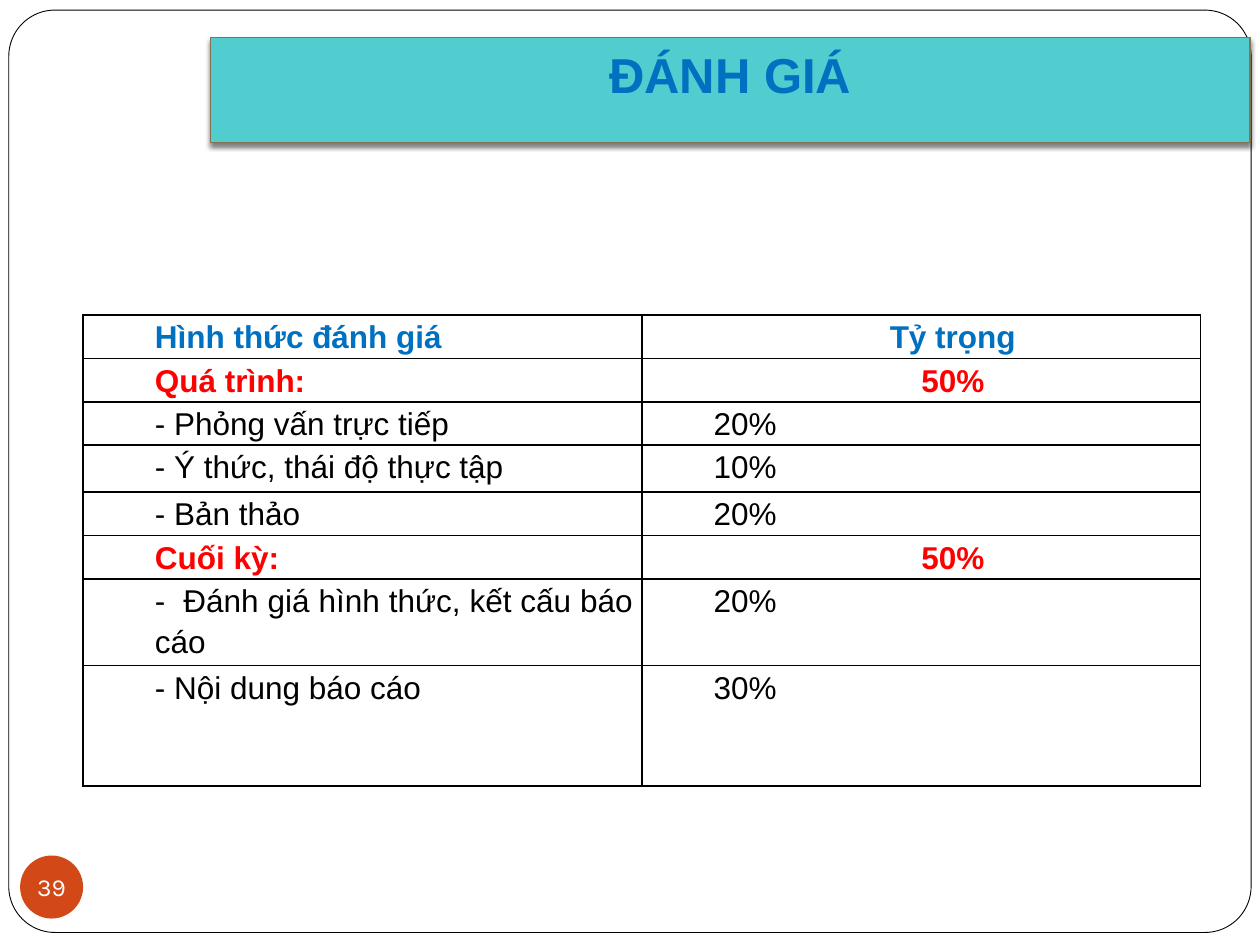
from collections import namedtuple

from lxml import etree
from pptx import Presentation
from pptx.dml.color import RGBColor
from pptx.enum.shapes import MSO_SHAPE as Shape
from pptx.enum.text import MSO_ANCHOR as Anchor, MSO_AUTO_SIZE as AutoSize, PP_ALIGN as Align
from pptx.oxml.ns import qn
from pptx.util import Inches, Pt

BLACK = RGBColor(0x00, 0x00, 0x00)
WHITE = RGBColor(0xFF, 0xFF, 0xFF)
BLUE = RGBColor(0x00, 0x70, 0xC0)
RED = RGBColor(0xFF, 0x00, 0x00)
TURQUOISE = RGBColor(0x51, 0xCC, 0xCF)
BROWN = RGBColor(0x84, 0x72, 0x53)
ORANGE = RGBColor(0xD3, 0x48, 0x17)

SLIDE_WIDTH, SLIDE_HEIGHT = Inches(10), Inches(7.5)
Box = namedtuple("Box", "left top width height")

HEADING, GROUP, ITEM = "heading", "group", "item"
ROW_COLORS = {HEADING: BLUE, GROUP: RED, ITEM: BLACK}
CRITERIA = [
    (HEADING, 1, "Hình thức đánh giá", "Tỷ trọng"),
    (GROUP, 1, "Quá trình:", "50%"),
    (ITEM, 1, "- Phỏng vấn trực tiếp", "20%"),
    (ITEM, 1.08, "- Ý thức, thái độ thực tập", "10%"),
    (ITEM, 1, "- Bản thảo", "20%"),
    (GROUP, 1, "Cuối kỳ:", "50%"),
    (ITEM, 2, "-  Đánh giá hình thức, kết cấu báo cáo", "20%"),
    (ITEM, 2.77, "- Nội dung báo cáo", "30%"),
]


def percent_box(left, top, width, height):
    return Box(int(SLIDE_WIDTH * left / 100), int(SLIDE_HEIGHT * top / 100),
               int(SLIDE_WIDTH * width / 100), int(SLIDE_HEIGHT * height / 100))


def style_text(paragraph, name, size, color, bold=False, align=Align.CENTER):
    paragraph.alignment = align
    for run in paragraph.runs:
        run.font.name, run.font.size, run.font.bold = name, Pt(size), bold
        run.font.color.rgb = color


def paint(shape, fill, line=None, width=0):
    shape.fill.solid()
    shape.fill.fore_color.rgb = fill
    if line is None:
        shape.line.fill.background()
    else:
        shape.line.color.rgb = line
        shape.line.width = Pt(width)


def add_color(parent, color):
    return etree.SubElement(parent, qn("a:srgbClr"), val=str(color))


def add_shadow(shape):
    effects = etree.SubElement(shape.element.spPr, qn("a:effectLst"))
    shadow = etree.SubElement(effects, qn("a:outerShdw"), blurRad=str(Pt(3)),
                              dist=str(Pt(2)), dir="5400000", rotWithShape="0")
    etree.SubElement(add_color(shadow, BLACK), qn("a:alpha"), val="50000")


def add_frame(slide, box):
    frame = slide.shapes.add_shape(Shape.ROUNDED_RECTANGLE, *box)
    frame.adjustments[0] = 0.05
    frame.shadow.inherit = False
    paint(frame, WHITE, BLACK, 0.5)
    slide.shapes.title.element.addprevious(frame.element)


def add_page_badge(slide, box, number):
    badge = slide.shapes.add_shape(Shape.OVAL, *box)
    badge.shadow.inherit = False
    paint(badge, ORANGE)
    frame = badge.text_frame
    frame.margin_left = frame.margin_right = frame.margin_top = frame.margin_bottom = 0
    frame.word_wrap = False
    frame.vertical_anchor = Anchor.MIDDLE
    frame.text = number
    style_text(frame.paragraphs[0], "Karla", 14, WHITE)


def place_title(slide, box, text):
    title = slide.shapes.title
    title.left, title.top, title.width, title.height = box
    paint(title, TURQUOISE, BROWN, 0.75)
    add_shadow(title)
    frame = title.text_frame
    frame.auto_size = AutoSize.NONE
    frame.vertical_anchor = Anchor.TOP
    frame.text = text
    style_text(frame.paragraphs[0], "Arial", 28, BLUE, bold=True)


def add_borders(cell):
    properties = cell._tc.get_or_add_tcPr()
    for index, side in enumerate(("a:lnL", "a:lnR", "a:lnT", "a:lnB")):
        border = etree.Element(qn(side), w=str(Pt(1)))
        add_color(etree.SubElement(border, qn("a:solidFill")), BLACK)
        properties.insert(index, border)


def fill_cell(cell, text, kind, align):
    cell.fill.background()
    cell.margin_left = cell.margin_right = Inches(0.07)
    cell.margin_top = cell.margin_bottom = 0
    cell.text_frame.text = text
    paragraph = cell.text_frame.paragraphs[0]
    paragraph.line_spacing = 1.15
    paragraph._p.get_or_add_pPr().set("marL", str(Inches(0.5)))
    style_text(paragraph, "Arial", 18, ROW_COLORS[kind], kind != ITEM, align)
    add_borders(cell)


def add_criteria_table(slide, box, criteria):
    table = slide.shapes.add_table(len(criteria), 2, *box).table
    table.first_row = table.horz_banding = False
    for column in table.columns:
        column.width = box.width // 2
    total = sum(weight for _, weight, _, _ in criteria)
    for index, (kind, weight, label, share) in enumerate(criteria):
        table.rows[index].height = int(box.height * weight / total)
        fill_cell(table.cell(index, 0), label, kind, Align.JUSTIFY)
        fill_cell(table.cell(index, 1), share, kind,
                  Align.LEFT if kind == ITEM else Align.CENTER)


def main():
    presentation = Presentation()
    presentation.slide_width, presentation.slide_height = SLIDE_WIDTH, SLIDE_HEIGHT
    slide = presentation.slides.add_slide(presentation.slide_layouts[5])
    add_frame(slide, percent_box(0.7, 1.07, 98.6, 97.6))
    place_title(slide, percent_box(16.7, 4, 82.5, 11.07), "ĐÁNH GIÁ")
    add_page_badge(slide, percent_box(1.6, 90.53, 5, 6.67), "39")
    add_criteria_table(slide, percent_box(6.6, 33.33, 88.7, 49.87), CRITERIA)
    presentation.save("out.pptx")


if __name__ == "__main__":
    main()
